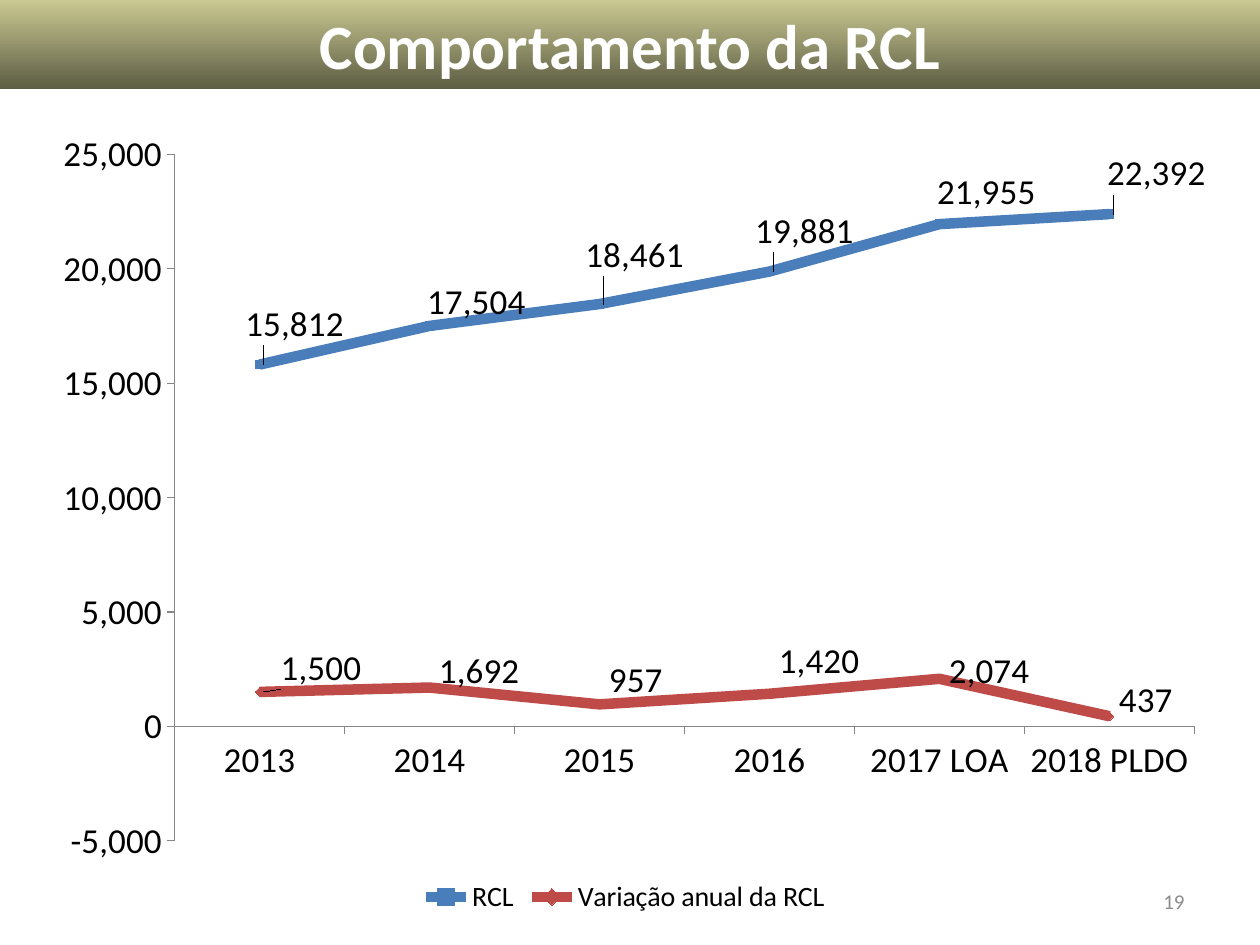
from lxml.etree import SubElement
from pptx import Presentation
from pptx.chart.data import CategoryChartData
from pptx.dml.color import RGBColor
from pptx.enum.chart import (XL_CHART_TYPE, XL_LABEL_POSITION, XL_LEGEND_POSITION,
                             XL_MARKER_STYLE, XL_TICK_MARK)
from pptx.enum.shapes import MSO_SHAPE
from pptx.enum.text import MSO_ANCHOR, PP_ALIGN
from pptx.oxml.ns import qn
from pptx.util import Cm, Pt

COLORS = {"top": "CAC992", "bottom": "5D5D44", "white": "FFFFFF", "black": "000000",
          "number": "8C8C8C", "axis": "868686", "RCL": "4A7EBB", "change": "BE4B48"}


def rgb(name):
    return RGBColor.from_string(COLORS[name])


def add_layout(parent, index, **values):
    """Insert a manual chart layout into parent at the given child index."""
    layout = SubElement(parent, qn("c:layout"))
    manual = SubElement(layout, qn("c:manualLayout"))
    for tag, value in values.items():
        SubElement(manual, qn("c:" + tag)).set("val", str(value))
    parent.insert(index, layout)


prs = Presentation()
prs.slide_width, prs.slide_height = Cm(25.4), Cm(19.05)
s = prs.slides.add_slide(prs.slide_layouts[6])

# Title band and slide number
band = s.shapes.add_shape(MSO_SHAPE.RECTANGLE, 0, 0, Cm(25.4), Cm(1.8))
band.shadow.inherit = False
band.line.fill.background()
band.fill.gradient()
band.fill.gradient_angle = 270
for stop, color, position in zip(band.fill.gradient_stops, ("top", "bottom"), (0, 1)):
    stop.color.rgb = rgb(color)
    stop.position = position
number = s.shapes.add_textbox(Cm(18.2), Cm(17.65), Cm(5.93), Cm(1.02))

for sp, text, align, color, font in (
        (band, "Comportamento da RCL", PP_ALIGN.CENTER, "white",
         {"name": "Calibri", "size": Pt(36), "bold": True}),
        (number, "19", PP_ALIGN.RIGHT, "number", {"name": "Calibri", "size": Pt(12)})):
    tf = sp.text_frame
    tf.word_wrap = True
    tf.vertical_anchor = MSO_ANCHOR.MIDDLE
    p = tf.paragraphs[0]
    p.alignment = align
    r = p.add_run()
    r.text = text
    for key, value in font.items():
        setattr(r.font, key, value)
    r.font.color.rgb = rgb(color)

# Chart data
data = CategoryChartData(number_format="#,##0")
data.categories = ["2013", "2014", "2015", "2016", "2017 LOA", "2018 PLDO"]
data.add_series("RCL", (15812, 17504, 18461, 19881, 21955, 22392))
data.add_series("Variação anual da RCL", (1500, 1692, 957, 1420, 2074, 437))
chart = s.shapes.add_chart(XL_CHART_TYPE.LINE_MARKERS, Cm(0.71), Cm(2.13),
                           Cm(23.8), Cm(16.41), data).chart
chart.has_title = False
chart.font.name = "Calibri"
chart.font.size = Pt(10)
chart.font.color.rgb = rgb("black")

# Plot area and legend
plot = chart.plots[0]
plot.vary_by_categories = False
area = chart.element.find(".//" + qn("c:plotArea"))
for old in area.findall(qn("c:layout")):
    area.remove(old)
add_layout(area, 0, layoutTarget="inner", xMode="edge", yMode="edge",
           x=0.118, y=0.06, w=0.864, h=0.843)
chart.has_legend = True
chart.legend.position = XL_LEGEND_POSITION.BOTTOM
chart.legend.include_in_layout = False
chart.legend.font.size = Pt(16)

# Axes
for axis in (chart.category_axis, chart.value_axis):
    axis.has_major_gridlines = False
    axis.major_tick_mark = XL_TICK_MARK.OUTSIDE
    axis.tick_labels.font.size = Pt(20)
    axis.format.line.color.rgb = rgb("axis")
    axis.format.line.width = Pt(0.75)
axis = chart.value_axis
axis.minimum_scale, axis.maximum_scale, axis.major_unit = -5000, 25000, 5000
axis.tick_labels.number_format = "#,##0"
axis.tick_labels.number_format_is_linked = False

# Series, with each label shifted from the right of its point
STYLES = (
    ("RCL", XL_MARKER_STYLE.SQUARE, ((-0.02, -0.05), (-0.01, -0.03), (-0.02, -0.06),
                                     (-0.02, -0.05), (-0.01, -0.04), (-0.01, -0.05))),
    ("change", XL_MARKER_STYLE.DIAMOND, ((0.01, -0.03), (0, -0.02), (0, -0.03),
                                         (0, -0.04), (0, -0.01), (0, -0.02))),
)
for series, (color, marker, shifts) in zip(plot.series, STYLES):
    series.smooth = False
    series.format.line.color.rgb = rgb(color)
    series.format.line.width = Pt(6)
    series.marker.style = marker
    series.marker.size = 5
    series.marker.format.fill.solid()
    series.marker.format.fill.fore_color.rgb = rgb(color)
    series.marker.format.line.color.rgb = rgb(color)
    labels = series.data_labels
    labels.show_value = True
    labels.number_format = "#,##0"
    labels.number_format_is_linked = False
    labels.position = XL_LABEL_POSITION.RIGHT
    labels.font.size = Pt(20)
    for i in range(len(shifts)):
        label = series.points[i].data_label
        label.position = XL_LABEL_POSITION.RIGHT
        label.font.size = Pt(20)
    for item, (x, y) in zip(labels._element.findall(qn("c:dLbl")), shifts):
        add_layout(item, 1, x=x, y=y)

prs.save("out.pptx")
